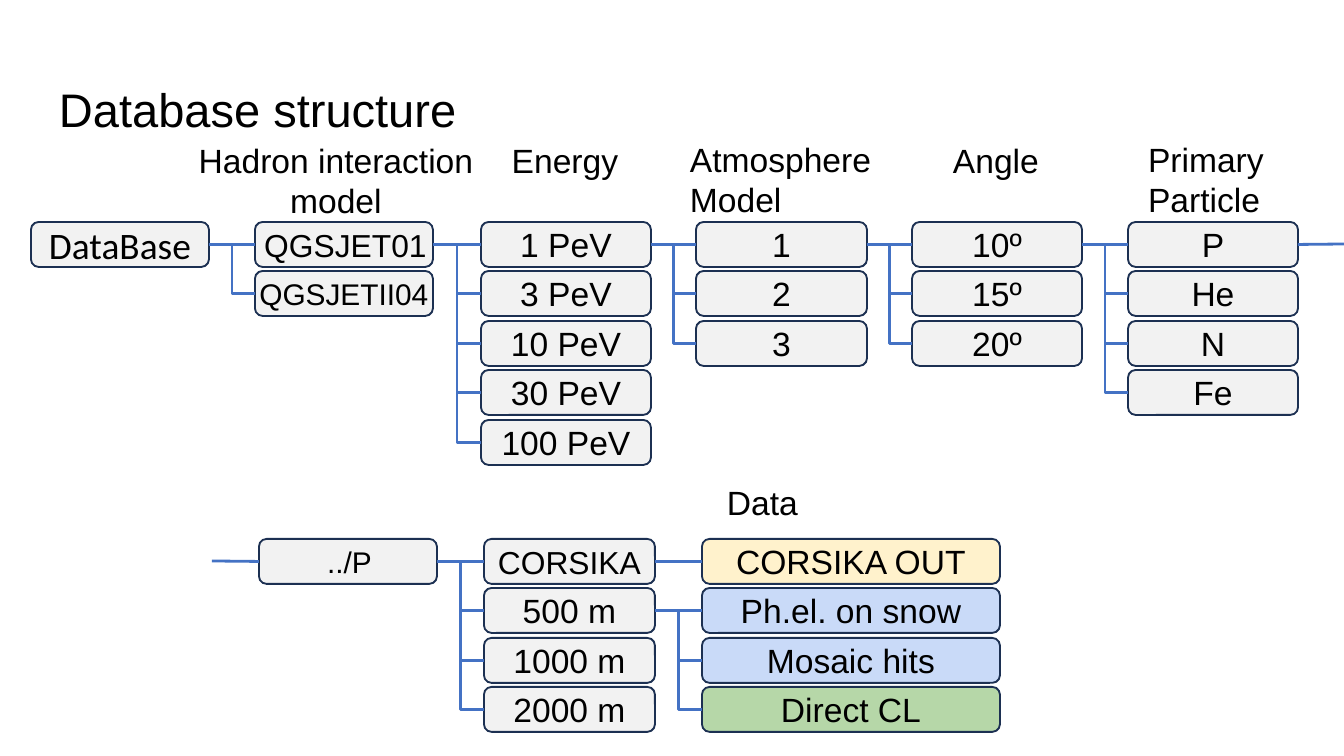
from lxml import etree
from pptx import Presentation
from pptx.dml.color import RGBColor
from pptx.enum.shapes import MSO_CONNECTOR, MSO_SHAPE
from pptx.enum.text import MSO_ANCHOR, PP_ALIGN
from pptx.oxml import parse_xml
from pptx.oxml.ns import nsdecls, qn
from pptx.util import Pt

STRAIGHT, ELBOW = MSO_CONNECTOR.STRAIGHT, MSO_CONNECTOR.ELBOW
ROUNDED = MSO_SHAPE.ROUNDED_RECTANGLE
LEFT, CENTER = PP_ALIGN.LEFT, PP_ALIGN.CENTER
TOP, MIDDLE = MSO_ANCHOR.TOP, MSO_ANCHOR.MIDDLE
RIGHT_SIDE, LEFT_SIDE = 3, 1

PX = 914400 / 134.4
COLORS = {
    "text": "000000", "edge": "1C3052", "link": "4472C4", "gray": "F2F2F2",
    "yellow": "FFF2CC", "blue": "C9DAF8", "green": "B6D7A8",
}
BOX_H = 45
WIDE, TIGHT, NONE, SHIFTED = (13, 13), (8, 8), (0, 0), (3, 0)


def write(s, text, size, font="Arial", align=CENTER, anchor=TOP, insets=WIDE, vertical=7):
    tf = s.text_frame
    tf.word_wrap = True
    tf.vertical_anchor = anchor
    tf.margin_left, tf.margin_right = (int(i * PX) for i in insets)
    tf.margin_top = tf.margin_bottom = int(vertical * PX)
    p = tf.paragraphs[0]
    p.alignment = align
    r = p.add_run()
    r.text = text
    r.font.size = Pt(size)
    r.font.name = font
    r.font.color.rgb = RGBColor.from_string(COLORS["text"])
    return r


def link(kind, start=None, end=None, points=(0, 0, 0, 0)):
    c = sp.add_connector(kind, *(int(v * PX) for v in points))
    if start is not None:
        c.begin_connect(start, RIGHT_SIDE)
    if end is not None:
        c.end_connect(end, LEFT_SIDE)
    c.line.color.rgb = RGBColor.from_string(COLORS["link"])
    c.line.width = Pt(1.5)
    etree.SubElement(c._element.spPr, qn("a:effectLst"))


prs = Presentation()
prs.slide_width, prs.slide_height = int(1344 * PX), int(756 * PX)
slide = prs.slides.add_slide(prs.slide_layouts[5])
sp = slide.shapes

title = sp.title
title.left, title.top, title.width, title.height = (int(v * PX) for v in (46, 66, 1253, 85))
r = write(title, "Database structure", 25.2, align=LEFT, anchor=MIDDLE, vertical=13)
shadow = parse_xml(
    f'<a:effectLst {nsdecls("a")}><a:outerShdw blurRad="38100" dist="38100" dir="2700000" algn="tl">'
    '<a:srgbClr val="000000"><a:alpha val="43000"/></a:srgbClr></a:outerShdw></a:effectLst>'
)
r.font.fill._xPr.find(qn("a:solidFill")).addnext(shadow)

labels = [
    ("Hadron interaction model", 160, 133, 352, 95, CENTER),
    ("Energy", 497, 133, 136, 54, CENTER),
    ("Atmosphere Model", 677, 132, 212, 95, LEFT),
    ("Angle", 940, 133, 136, 54, LEFT),
    ("Primary Particle", 1135, 132, 163, 95, LEFT),
    ("Data", 714, 475, 194, 54, LEFT),
]
for text, x, y, w, h, align in labels:
    s = sp.add_textbox(*(int(v * PX) for v in (x, y, w, h)))
    write(s, text, 18, align=align)

columns = [
    (31, 222, 178, [("DataBase", 20, WIDE, "gray")]),
    (255, 222, 178, [("QGSJET01", 17, SHIFTED, "gray"), ("QGSJETII04", 16, NONE, "gray")]),
    (481, 222, 170, [(f"{e} PeV", 18, WIDE, "gray") for e in (1, 3, 10, 30, 100)]),
    (696, 222, 171, [(n, 18, WIDE, "gray") for n in "123"]),
    (912, 222, 170, [(f"{a}º", 18, WIDE, "gray") for a in (10, 15, 20)]),
    (1128, 222, 170, [(n, 18, WIDE, "gray") for n in ("P", "He", "N", "Fe")]),
    (259, 539, 178, [("../P", 16, SHIFTED, "gray")]),
    (484, 539, 171, [("CORSIKA", 17, TIGHT, "gray")]
     + [(f"{h} m", 18, WIDE, "gray") for h in (500, 1000, 2000)]),
    (702, 539, 298, [("CORSIKA OUT", 18, WIDE, "yellow"), ("Ph.el. on snow", 18, WIDE, "blue"),
                     ("Mosaic hits", 18, WIDE, "blue"), ("Direct CL", 18, WIDE, "green")]),
]
boxes = []
for x, y, w, items in columns:
    column = []
    for i, (text, size, insets, fill) in enumerate(items):
        top = y + i * 99 // 2
        s = sp.add_shape(ROUNDED, *(int(v * PX) for v in (x, top, w, BOX_H)))
        s.adjustments[0] = 0.17
        s.shadow.inherit = False
        s.fill.solid()
        s.fill.fore_color.rgb = RGBColor.from_string(COLORS[fill])
        s.line.color.rgb = RGBColor.from_string(COLORS["edge"])
        s.line.width = Pt(1)
        font = "Calibri" if text == "DataBase" else "Arial"
        write(s, text, size, font, anchor=MIDDLE, insets=insets)
        column.append(s)
    boxes.append(column)

database, hadron, energy, atmosphere, angle, particle, folder, levels, outputs = boxes
branches = [
    (database[0], hadron), (hadron[0], energy), (energy[0], atmosphere),
    (atmosphere[0], angle), (angle[0], particle), (folder[0], levels),
    (levels[0], outputs[:1]), (levels[1], outputs[1:]),
]
for parent, children in branches:
    for i, child in enumerate(children):
        link(ELBOW if i else STRAIGHT, parent, child)
link(STRAIGHT, start=particle[0], points=(1298, 244, 1345, 244))
link(STRAIGHT, end=folder[0], points=(212, 561, 259, 561))

prs.save("out.pptx")
